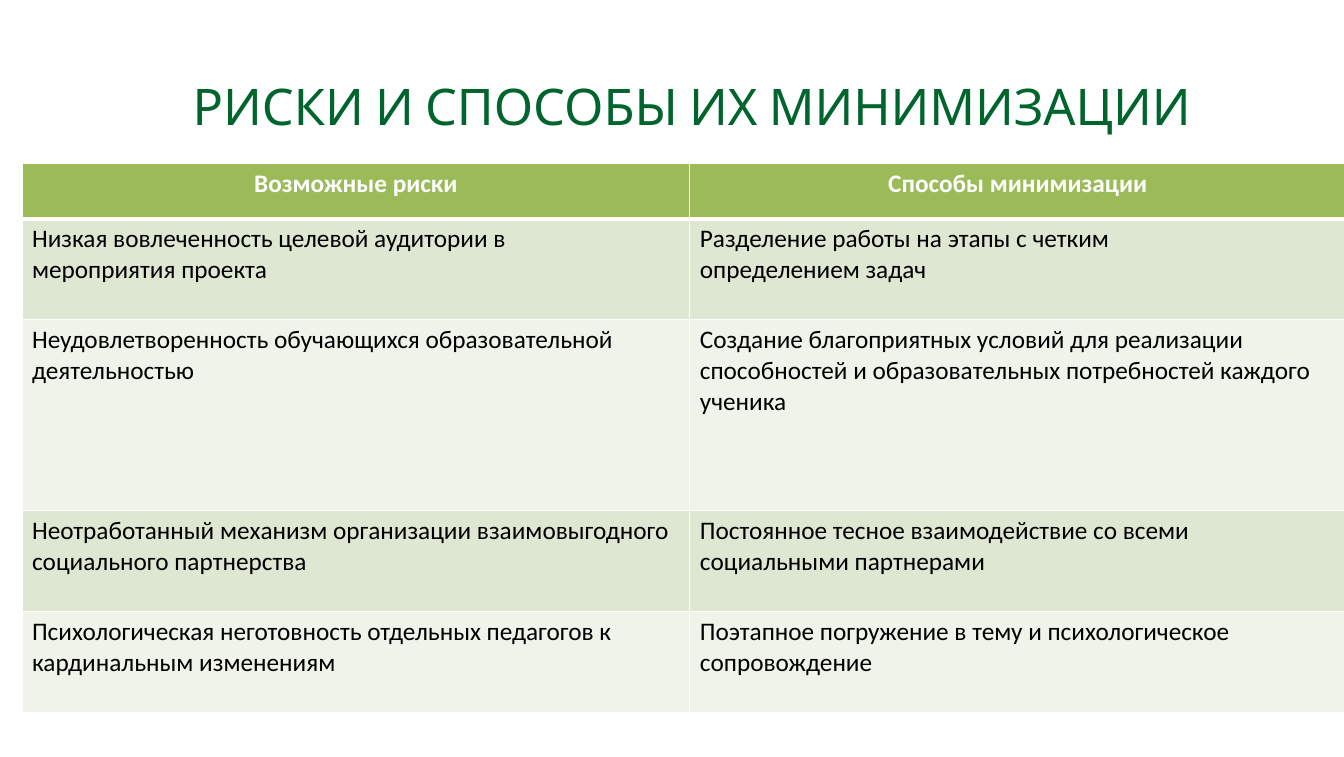
from lxml import etree
from pptx import Presentation
from pptx import util as u
from pptx.dml.color import RGBColor
from pptx.enum import text
from pptx.oxml import ns

PX = 914400 / 101
TITLE_GREEN = RGBColor(0x00, 0x64, 0x2D)
HEADER_GREEN = RGBColor(0x9B, 0xBB, 0x59)
BANDS = [RGBColor(0xEF, 0xF3, 0xEA), RGBColor(0xDE, 0xE7, 0xD1)]
WHITE = RGBColor(0xFF, 0xFF, 0xFF)
BLACK = RGBColor(0x00, 0x00, 0x00)

COLUMN_WIDTHS = [668, 656]
ROW_HEIGHTS = [55, 101, 191, 101, 101]
RISKS = [
    ("Возможные риски", "Способы минимизации"),
    ("Низкая вовлеченность целевой аудитории в\nмероприятия проекта",
     "Разделение работы на этапы с четким\nопределением задач"),
    ("Неудовлетворенность обучающихся образовательной деятельностью",
     "Создание благоприятных условий для реализации способностей и "
     "образовательных потребностей каждого ученика"),
    ("Неотработанный механизм организации взаимовыгодного социального партнерства",
     "Постоянное тесное взаимодействие со всеми социальными партнерами"),
    ("Психологическая неготовность отдельных педагогов к кардинальным изменениям",
     "Поэтапное погружение в тему и психологическое сопровождение"),
]


def px(length):
    return u.Emu(round(length * PX))


def set_borders(cell, top, bottom):
    """Draw white borders; top and bottom widths are in points."""
    properties = cell._tc.get_or_add_tcPr()
    for position, (side, width) in enumerate(
            [("L", 1), ("R", 1), ("T", top), ("B", bottom)]):
        line = etree.Element(ns.qn(f"a:ln{side}"), w=str(u.Pt(width)))
        fill = etree.SubElement(line, ns.qn("a:solidFill"))
        etree.SubElement(fill, ns.qn("a:srgbClr"), val=str(WHITE))
        properties.insert(position, line)


presentation = Presentation()
presentation.slide_width = u.Inches(13.31)
presentation.slide_height = u.Inches(7.5)
slide = presentation.slides.add_slide(presentation.slide_layouts[5])

# Title
title = slide.shapes.title
title.left, title.top, title.width, title.height = px(20), px(81), px(1344), px(56)
frame = title.text_frame
frame.text = "РИСКИ И СПОСОБЫ ИХ МИНИМИЗАЦИИ"
frame.margin_left = frame.margin_top = frame.margin_right = frame.margin_bottom = 0
frame.auto_size = text.MSO_AUTO_SIZE.NONE
frame.vertical_anchor = text.MSO_ANCHOR.MIDDLE
paragraph = frame.paragraphs[0]
paragraph.alignment = text.PP_ALIGN.CENTER
paragraph.line_spacing = 0.9
font = paragraph.runs[0].font
font.name, font.size, font.color.rgb = "Cabin", u.Pt(36), TITLE_GREEN

# Risk table
table = slide.shapes.add_table(
    len(ROW_HEIGHTS), len(COLUMN_WIDTHS), px(22), px(164),
    px(sum(COLUMN_WIDTHS)), px(sum(ROW_HEIGHTS))).table
for column, width in zip(table.columns, COLUMN_WIDTHS):
    column.width = px(width)

for row_index, (row, height, texts) in enumerate(zip(table.rows, ROW_HEIGHTS, RISKS)):
    row.height = px(height)
    is_header = row_index == 0
    for cell, wording in zip(row.cells, texts):
        cell.fill.solid()
        cell.fill.fore_color.rgb = HEADER_GREEN if is_header else BANDS[row_index % 2]
        set_borders(cell, top=3 if row_index == 1 else 1, bottom=3 if is_header else 1)
        cell.text_frame.text = wording
        for paragraph in cell.text_frame.paragraphs:
            paragraph.alignment = text.PP_ALIGN.CENTER if is_header else text.PP_ALIGN.LEFT
            font = paragraph.runs[0].font
            font.name, font.size, font.bold = "Calibri", u.Pt(18), is_header
            font.color.rgb = WHITE if is_header else BLACK

presentation.save("out.pptx")
